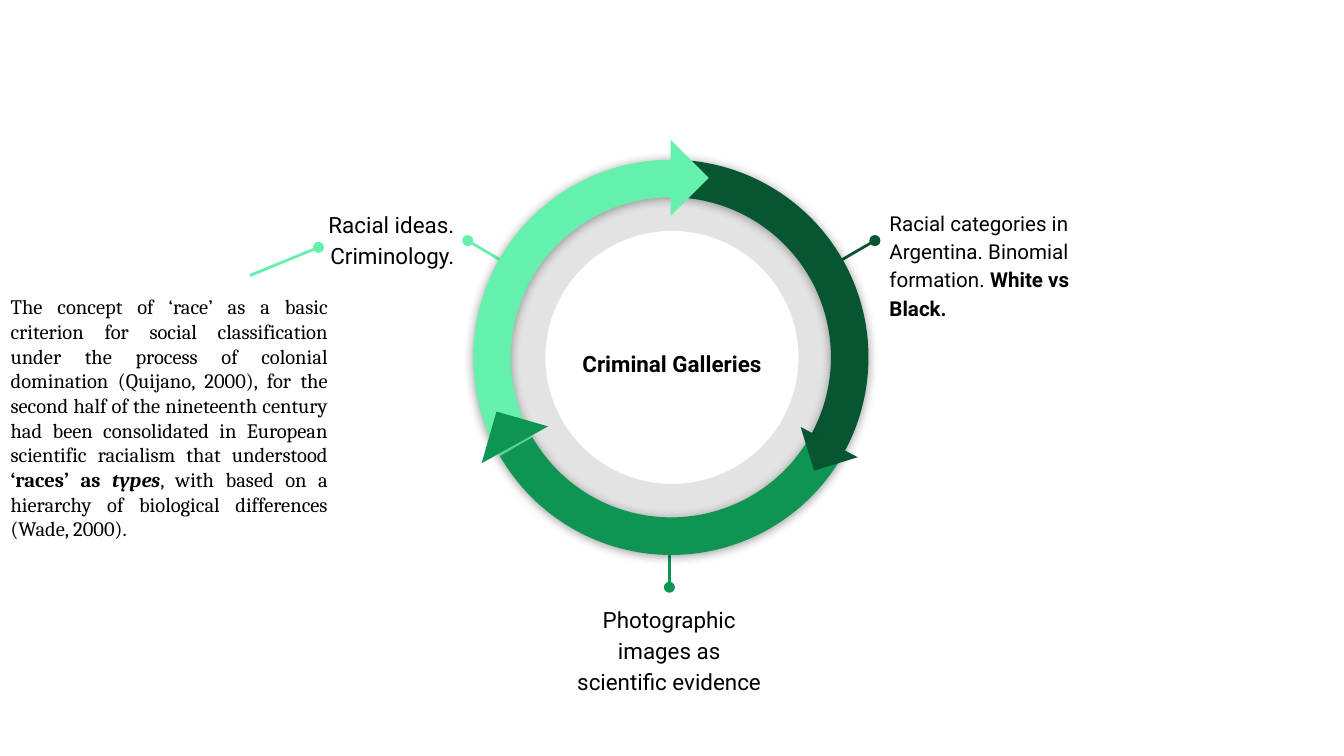
"""Build a slide with a three-step cycle around Criminal Galleries."""
from lxml import etree
from pptx import Presentation
from pptx.dml.color import RGBColor
from pptx.enum.shapes import MSO_CONNECTOR, MSO_SHAPE as Shape
from pptx.enum.text import MSO_ANCHOR as Anchor, PP_ALIGN as Align
from pptx.oxml import parse_xml
from pptx.oxml.ns import nsdecls, qn
from pptx.util import Pt

DARK, GREEN, LIGHT, BLACK = "085631", "0E9453", "65F0AD", "000000"

deck = Presentation()
deck.slide_width, deck.slide_height = Pt(720), Pt(405)
slide = deck.slides.add_slide(deck.slide_layouts[6])


def add_figure(kind, left, top, size, color, rotation=0, adjustments=()):
    """Add a square, filled preset shape without outline."""
    figure = slide.shapes.add_shape(kind, Pt(left), Pt(top), Pt(size), Pt(size))
    figure.shadow.inherit = False
    figure.fill.solid()
    figure.fill.fore_color.rgb = RGBColor.from_string(color)
    figure.line.fill.background()
    figure.rotation = rotation
    for index, value in enumerate(adjustments):
        figure.adjustments[index] = value
    return figure


def add_text(left, top, width, height, runs, size=12, font="Roboto",
             align=Align.LEFT, spacing=1.15, anchor=Anchor.TOP):
    """Add a wrapped text box from (text, bold, italic) runs."""
    box = slide.shapes.add_textbox(Pt(left), Pt(top), Pt(width), Pt(height))
    frame = box.text_frame
    frame.word_wrap = True
    frame.vertical_anchor = anchor
    frame.margin_left = frame.margin_right = Pt(7.2)
    frame.margin_top = frame.margin_bottom = Pt(7.2)
    para = frame.paragraphs[0]
    para.alignment, para.line_spacing = align, spacing
    for text, bold, italic in runs:
        span = para.add_run()
        span.text = text
        span.font.name, span.font.size = font, Pt(size)
        span.font.bold, span.font.italic = bold, italic
        span.font.color.rgb = RGBColor.from_string(BLACK)


ring = add_figure(Shape.DONUT, 260, 91.5, 200, BLACK, adjustments=[0.161])
ring_color = ring.fill._xPr.find(qn("a:solidFill"))[0]
etree.SubElement(ring_color, qn("a:alpha"), val="11000")

pointers = [
    (250.6, 128.9, 284.4, 149, LIGHT),
    (468.7, 128.9, 434.2, 149, DARK),
    (358.6, 314.6, 358.6, 278.6, GREEN),
    (170.6, 132.5, 133.9, 147.6, LIGHT),
]
for start_x, start_y, end_x, end_y, color in pointers:
    pointer = slide.shapes.add_connector(
        MSO_CONNECTOR.STRAIGHT, Pt(start_x), Pt(start_y), Pt(end_x), Pt(end_y))
    pointer.line.color.rgb = RGBColor.from_string(color)
    pointer.line.width = Pt(1.5)
    etree.SubElement(pointer.line._get_or_add_ln(), qn("a:headEnd"), type="oval")
    etree.SubElement(pointer._element.spPr, qn("a:effectLst"))

for rotation, color in [(30, DARK), (270, LIGHT), (150, GREEN)]:
    arc = add_figure(Shape.BLOCK_ARC, 253.6, 85.6, 211.7, color, rotation,
                     [144, 0, 0.095])
    effects = arc._element.spPr.find(qn("a:effectLst"))
    effects.append(parse_xml(
        f'<a:outerShdw {nsdecls("a")} blurRad="{Pt(5.6)}" dist="{Pt(0.8)}" '
        f'dir="5400000" rotWithShape="0"><a:srgbClr val="{BLACK}">'
        '<a:alpha val="40000"/></a:srgbClr></a:outerShdw>'))

for left, top, size, color, rotation in [
    (344.9, 80.9, 28.8, LIGHT, 225),
    (432, 224.6, 24.5, DARK, 342.9),
    (261.4, 223.9, 28.8, GREEN, 106),
]:
    add_figure(Shape.RIGHT_TRIANGLE, left, top, size, color, rotation)

add_text(132.5, 103.7, 118, 52.6, [("Racial ideas. Criminology.", False, False)],
         align=Align.RIGHT)
add_text(469.4, 103.7, 118, 52.6, [
    ("Racial categories in Argentina. Binomial formation. ", False, False),
    ("White vs Black.", True, False),
], size=11)
add_text(299.5, 315.4, 118, 52.6,
         [("Photographic images as scientific evidence", False, False)],
         align=Align.CENTER)
add_text(303.1, 162, 113.8, 63.4, [("Criminal Galleries", True, False)],
         align=Align.CENTER, anchor=Anchor.MIDDLE)
add_text(-1.4, 150.5, 184.3, 154.1, [
    ("The concept of ‘race’ as a basic criterion for social classification "
     "under the process of colonial domination (Quijano, 2000), for the second "
     "half of the nineteenth century had been consolidated in European "
     "scientific racialism that understood ", False, False),
    ("‘races’ as ", True, False),
    ("types", True, True),
    (", with based on a hierarchy of biological differences (Wade, 2000).",
     False, False),
], size=11, font="Cambria", align=Align.JUSTIFY, spacing=1.0)

deck.save("out.pptx")
